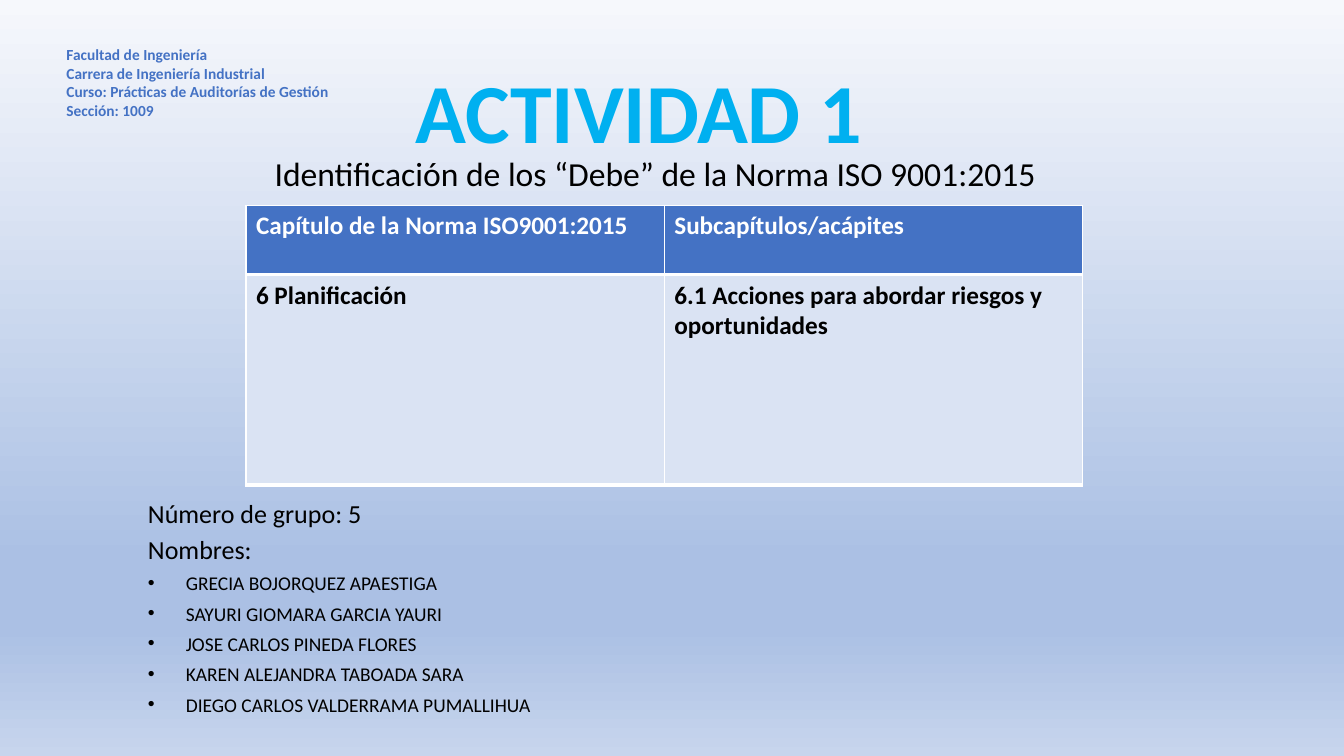
from lxml.etree import SubElement
from pptx import Presentation
from pptx.dml.color import RGBColor
from pptx.enum.text import MSO_ANCHOR, MSO_AUTO_SIZE, PP_ALIGN
from pptx.oxml.ns import qn
from pptx.util import Pt

COLORS = {
    "title": "00B0F0",
    "accent": "4472C4",
    "cell": "DAE3F3",
    "black": "000000",
    "white": "FFFFFF",
}
BACKGROUND = [(0, "F6F8FC"), (74, "ABC0E4"), (83, "ABC0E4"), (100, "C7D5ED")]
TABLE_LEFT, TABLE_WIDTH = 175.68, 597.6
HEADER_TOP, HEADER_HEIGHT, BODY_HEIGHT = 146.88, 49.68, 149.76


class SlideBuilder:
    """Holds the slide and its style."""

    font = "Calibri"

    def __init__(self, prs):
        self.s = prs.slides.add_slide(prs.slide_layouts[5])

    def background(self, stops):
        fill = self.s.background.fill
        fill.gradient()
        fill.gradient_angle = 270
        gs_list = self.s.element.find(".//" + qn("a:gsLst"))
        for gs in list(gs_list):
            gs_list.remove(gs)
        for pos, color in stops:
            gs = SubElement(gs_list, qn("a:gs"), pos=str(pos * 1000))
            SubElement(gs, qn("a:srgbClr"), val=color)

    def paragraph(self, p, text, size, color, bold=False, bullet=False, **spacing):
        p.text = text
        if bullet:
            pPr = p._p.get_or_add_pPr()
            pPr.set("marL", str(Pt(27)))
            pPr.set("indent", str(-Pt(27)))
            SubElement(pPr, qn("a:buFont"), typeface="Arial")
            SubElement(pPr, qn("a:buChar"), char="•")
        for name, value in spacing.items():
            setattr(p, name, value)
        font = p.runs[0].font
        for name, value in {"name": self.font, "size": Pt(size), "bold": bold}.items():
            setattr(font, name, value)
        font.color.rgb = RGBColor.from_string(COLORS[color])

    def title(self, box, text, **style):
        sp = self.s.shapes.title
        for name, value in zip(("left", "top", "width", "height"), box):
            setattr(sp, name, Pt(value))
        tf = sp.text_frame
        tf.auto_size = MSO_AUTO_SIZE.NONE
        tf.vertical_anchor = MSO_ANCHOR.BOTTOM
        self.paragraph(tf.paragraphs[0], text, **style)

    def text(self, box, lines, space=0, **style):
        tf = self.s.shapes.add_textbox(*map(Pt, box)).text_frame
        tf.word_wrap = True
        for i, (text, extra) in enumerate(lines):
            p = tf.add_paragraph() if i else tf.paragraphs[0]
            self.paragraph(p, text, space_before=Pt(space if i else 0),
                           **{**style, **extra})

    def table(self, top, height, texts, fill, color):
        box = map(Pt, (TABLE_LEFT, top, TABLE_WIDTH, height))
        table = self.s.shapes.add_table(1, len(texts), *box).table
        table.first_row = table.horz_banding = False
        for cell, text in zip(table.rows[0].cells, texts):
            self.paragraph(cell.text_frame.paragraphs[0], text, 18, color, bold=True)
            self.borders(cell)
            cell.fill.solid()
            cell.fill.fore_color.rgb = RGBColor.from_string(COLORS[fill])

    def borders(self, cell):
        tcPr = cell._tc.get_or_add_tcPr()
        for side, width in {"L": 1, "R": 1, "T": 1, "B": 3}.items():
            ln = SubElement(tcPr, qn("a:ln" + side), w=str(Pt(width)))
            solid = SubElement(ln, qn("a:solidFill"))
            SubElement(solid, qn("a:srgbClr"), val=COLORS["white"])


def main():
    prs = Presentation()
    prs.slide_width, prs.slide_height = Pt(960), Pt(540)
    slide = SlideBuilder(prs)
    slide.background(BACKGROUND)

    # Title and subtitle
    slide.title((96.48, 34.56, 720, 84.24), "ACTIVIDAD 1", size=60, color="title",
                bold=True, alignment=PP_ALIGN.CENTER, line_spacing=0.9)
    slide.text((108, 108.72, 720, 38.88),
               [("Identificación de los “Debe” de la Norma ISO 9001:2015", {})],
               size=24, color="black", alignment=PP_ALIGN.CENTER, line_spacing=0.9)

    # Chapter tables, one directly below the other
    slide.table(HEADER_TOP, HEADER_HEIGHT,
                ["Capítulo de la Norma ISO9001:2015", "Subcapítulos/acápites"],
                "accent", "white")
    slide.table(HEADER_TOP + HEADER_HEIGHT, BODY_HEIGHT,
                ["6 Planificación", "6.1 Acciones para abordar riesgos y oportunidades"],
                "cell", "black")

    # Group number and members
    members = ["GRECIA BOJORQUEZ APAESTIGA", "SAYURI GIOMARA GARCIA YAURI",
               "JOSE CARLOS PINEDA FLORES", "KAREN ALEJANDRA TABOADA SARA",
               "DIEGO CARLOS VALDERRAMA PUMALLIHUA"]
    lines = [("Número de grupo: 5", {}), ("Nombres:", {})]
    lines += [(name, {"size": 13.9, "bullet": True}) for name in members]
    slide.text((98.64, 357.84, 729.36, 159.12), lines, space=10,
               size=18.6, color="black", line_spacing=0.7)

    # Course details
    course = ["Facultad de Ingeniería", "Carrera de Ingeniería Industrial",
              "Curso: Prácticas de Auditorías de Gestión", "Sección: 1009"]
    slide.text((40.32, 28.8, 207.36, 60.48), [(line, {}) for line in course],
               size=11, color="accent", bold=True)

    prs.save("out.pptx")


if __name__ == "__main__":
    main()
